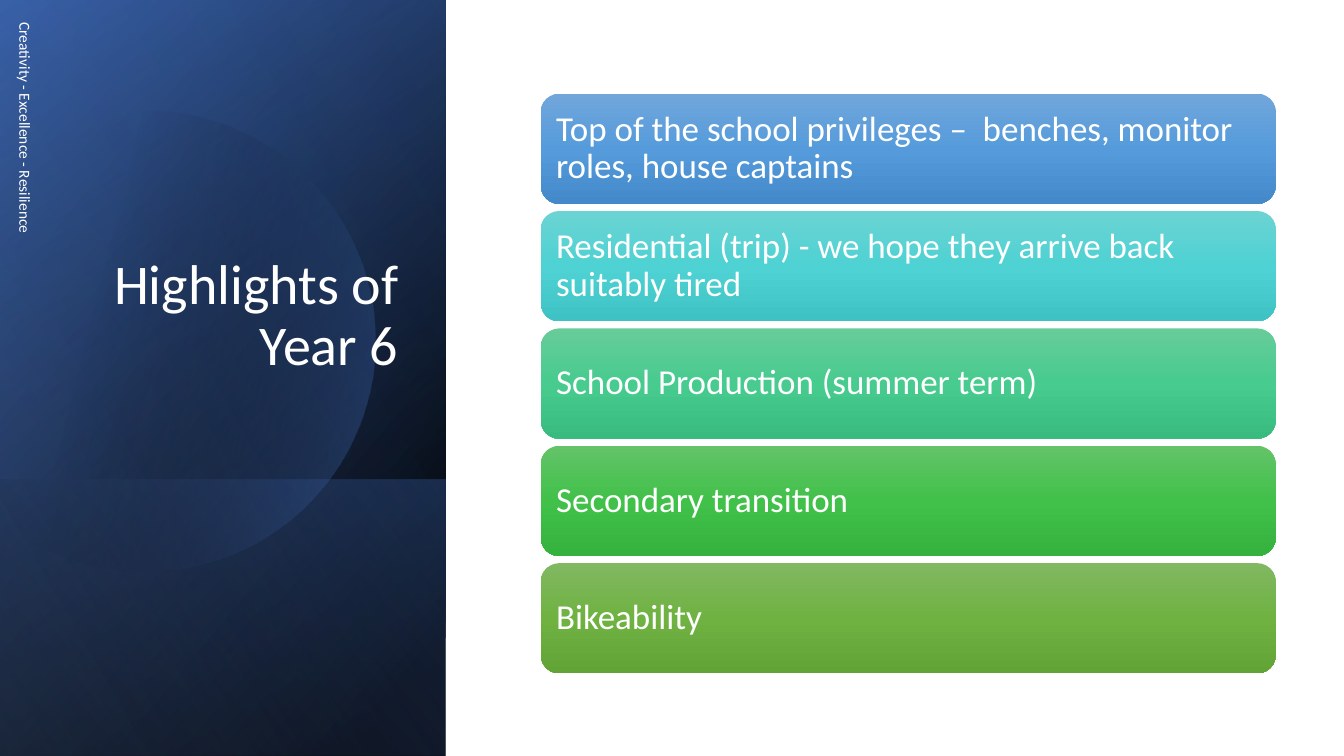
from math import acos, cos, sin

from pptx import Presentation
from pptx.dml.color import RGBColor
from pptx.enum.shapes import MSO_SHAPE as Shape
from pptx.enum.text import MSO_ANCHOR as Anchor, MSO_AUTO_SIZE as AutoSize, PP_ALIGN as Align
from pptx.oxml import parse_xml
from pptx.oxml.ns import nsdecls, qn
from pptx.util import Cm, Pt

COLORS = {
    "white": "FFFFFF", "black": "000000", "navy": "2F5597", "blue": "4472C4", "pale": "8FAADC",
}
HIGHLIGHTS = [
    ("Top of the school privileges –  benches, monitor roles, house captains",
     ("71A6DB", "559BDB", "448ACA")),
    ("Residential (trip) - we hope they arrive back suitably tired", ("6CD3D3", "4ED2D3", "3EC2C3")),
    ("School Production (summer term)", ("67CC9A", "47CB8E", "39BB7F")),
    ("Secondary transition", ("63C368", "42C14A", "34B23D")),
    ("Bikeability", ("81B861", "6FB242", "62A336")),
]


def paint(shape, stops, angle):
    """Fill a shape with a linear gradient of (position, colour, opacity) stops."""
    shape.shadow.inherit = False
    shape.line.fill.background()
    shape.fill.background()
    marks = "".join(
        f'<a:gs pos="{position * 1000}"><a:srgbClr val="{color}">'
        f'<a:alpha val="{opacity * 1000}"/></a:srgbClr></a:gs>'
        for position, color, opacity in stops)
    gradient = parse_xml(f'<a:gradFill {nsdecls("a")} rotWithShape="1"><a:gsLst>{marks}</a:gsLst>'
                         f'<a:lin ang="{angle * 60000}" scaled="0"/></a:gradFill>')
    properties = shape.element.spPr
    properties.replace(properties.find(qn("a:noFill")), gradient)


def write(shape, text, size, frame_format, paragraph_format):
    """Put one white paragraph into a shape and format it."""
    frame = shape.text_frame
    frame.text = text
    paragraph = frame.paragraphs[0]
    font_format = {"name": "Calibri", "size": Pt(size), "bold": False}
    for target, values in ((frame, frame_format), (paragraph, paragraph_format),
                           (paragraph.font, font_format)):
        for name, value in values.items():
            setattr(target, name, value)
    paragraph.font.color.rgb = RGBColor.from_string(COLORS["white"])


def turned(left, top, width, height):
    """Give the frame that covers the box once it is rotated by 90 degrees."""
    shift = (width - height) / 2
    return Cm(left + shift), Cm(top - shift), Cm(height), Cm(width)


def add_layer(slide, box, stops, angle):
    """Lay a mirrored, quarter-turned gradient over the box."""
    layer = slide.shapes.add_shape(Shape.RECTANGLE, *turned(*box))
    layer.rotation = 90
    layer.element.spPr.xfrm.set("flipH", "1")
    paint(layer, stops, angle)


def add_disc(slide, left, top, radius, center):
    """Draw the disc that is cut off by the left edge of the panel."""
    reach = acos(-center / radius)
    steps = 120
    angles = [reach * (2 * step / steps - 1) for step in range(steps + 1)]
    points = [(Cm(left + center + radius * cos(angle)), Cm(top + radius + radius * sin(angle)))
              for angle in angles]
    builder = slide.shapes.build_freeform(*points[0])
    builder.add_line_segments(points[1:], close=True)
    paint(builder.convert_to_shape(), [(29, COLORS["black"], 0), (100, COLORS["blue"], 43)], 14)


def add_panel(slide, left, top, width, height):
    """Build the dark panel with its title and vertical motto."""
    black, blue = COLORS["black"], COLORS["blue"]
    panel = (left, top, width, height)
    band = 6.96
    add_layer(slide, panel, [(8, black, 100), (100, COLORS["navy"], 100)], 50)
    add_layer(slide, panel, [(0, black, 0), (99, blue, 46)], 30)
    add_layer(slide, (left, top + height - band, width, band),
              [(2, blue, 29), (100, black, 30)], 130)
    add_disc(slide, left, top + 2.79, 5.8, 3.66)
    add_layer(slide, panel, [(0, black, 0), (99, COLORS["pale"], 11)], 120)

    title = slide.shapes.title
    title.left, title.top, title.width, title.height = (
        Cm(left + 1.63), Cm(top + 4.67), Cm(8.66), Cm(6.65))
    write(title, "Highlights of Year 6", 40,
          {"vertical_anchor": Anchor.BOTTOM, "margin_bottom": Cm(1.81),
           "auto_size": AutoSize.NONE, "word_wrap": True},
          {"alignment": Align.RIGHT, "line_spacing": 0.9})
    title.element.getparent().append(title.element)

    motto = slide.shapes.add_textbox(*turned(left + 0.13, top + 0.32, 1.02, 11.43))
    motto.rotation = 90
    write(motto, "Creativity - Excellence - Resilience", 11,
          {"vertical_anchor": Anchor.MIDDLE, "word_wrap": True}, {"space_after": Pt(6)})


def add_highlights(slide, left, top, width, height):
    """Stack one rounded card per highlight at equal gaps in the box."""
    gap = 0.18
    card_height = (height - gap * (len(HIGHLIGHTS) - 1)) / len(HIGHLIGHTS)
    margins = {f"margin_{side}": Cm(0.25) for side in ("left", "top", "right", "bottom")}
    for row, (highlight, shades) in enumerate(HIGHLIGHTS):
        card = slide.shapes.add_shape(
            Shape.ROUNDED_RECTANGLE, Cm(left), Cm(top + row * (card_height + gap)),
            Cm(width), Cm(card_height))
        paint(card, [(50 * step, shade, 100) for step, shade in enumerate(shades)], 90)
        write(card, highlight, 25,
              {"vertical_anchor": Anchor.MIDDLE, "word_wrap": True, **margins},
              {"alignment": Align.LEFT, "line_spacing": 0.9})


def main():
    """Create the slide and save it."""
    deck = Presentation()
    deck.slide_width, deck.slide_height = Cm(33.87), Cm(19.05)
    slide = deck.slides.add_slide(deck.slide_layouts[5])
    add_panel(slide, 0, 0, 11.23, 19.05)
    add_highlights(slide, 13.63, 2.36, 18.52, 14.61)
    deck.save("out.pptx")


if __name__ == "__main__":
    main()
